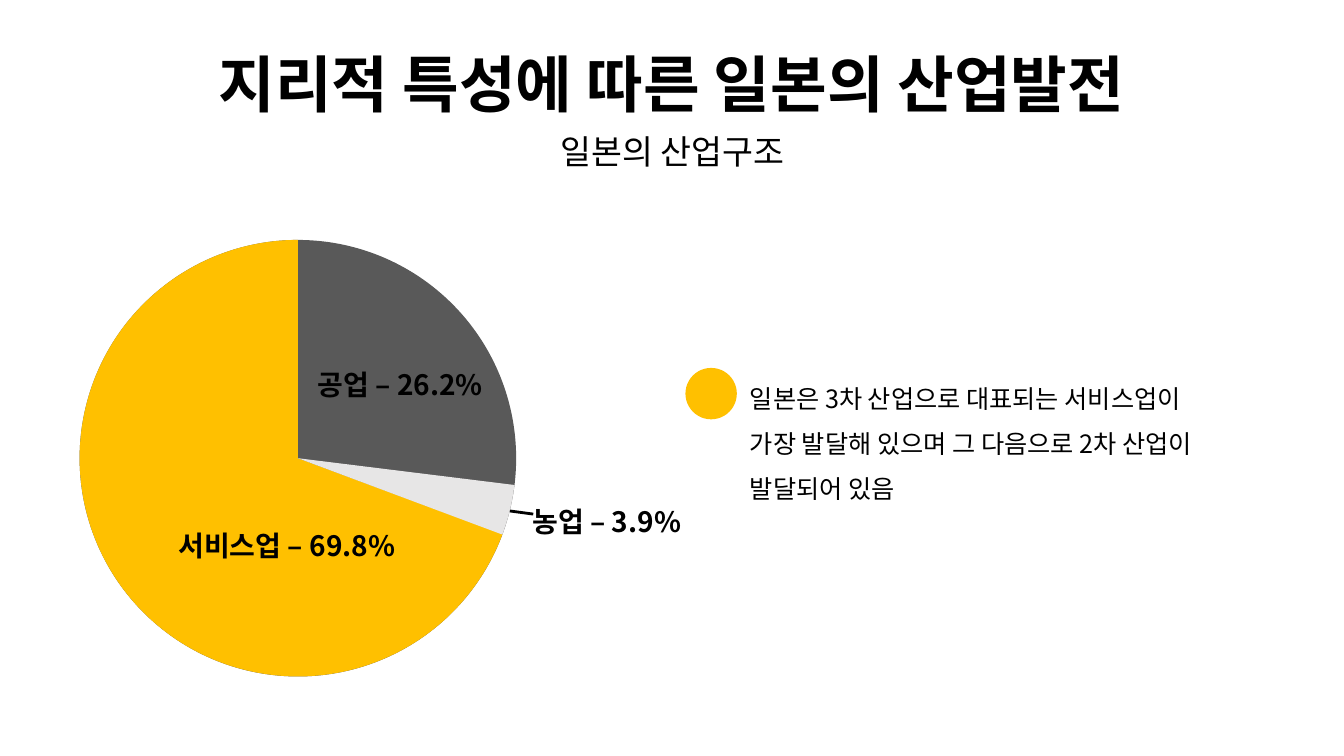
from dataclasses import dataclass

from lxml.etree import SubElement
from pptx import Presentation
from pptx.dml.color import RGBColor
from pptx.enum.shapes import MSO_CONNECTOR, MSO_SHAPE
from pptx.enum.text import MSO_ANCHOR, MSO_AUTO_SIZE, PP_ALIGN
from pptx.oxml.ns import qn
from pptx.util import Pt

COLORS = {"text": "000000", "industry": "595959", "service": "FFC000", "farming": "E7E6E6"}
FONT = "Noto Sans CJK KR"
PIE_LEFT, PIE_TOP, PIE_SIZE = 56.9, 171.4, 311.8


@dataclass(frozen=True)
class Sector:
    color: str
    start: float
    end: float


@dataclass(frozen=True)
class Label:
    text: str
    left: float
    top: float
    width: float


SECTORS = [Sector("service", 20.36, 270), Sector("farming", 7.06, 20.49)]
LABELS = [
    Label("서비스업 – 69.8%", 127.4, 365.8, 170),
    Label("공업 – 26.2%", 226.8, 250.6, 141.8),
    Label("농업 – 3.9%", 380.2, 348.5, 141.8),
]
SUMMARY = [
    "일본은 3차 산업으로 대표되는 서비스업이",
    "가장 발달해 있으며 그 다음으로 2차 산업이",
    "발달되어 있음",
]


def rgb(name: str) -> RGBColor:
    return RGBColor.from_string(COLORS[name])


def place(shape, left: float, top: float, width: float, height: float) -> None:
    shape.left, shape.top = Pt(left), Pt(top)
    shape.width, shape.height = Pt(width), Pt(height)


def write_text(shape, lines: list[str], *, size: float, bold: bool = False,
               align=PP_ALIGN.JUSTIFY, spacing: float = 1.5,
               inset: bool = False, wrap: bool = True) -> None:
    frame = shape.text_frame
    frame.word_wrap = wrap
    frame.auto_size = MSO_AUTO_SIZE.NONE if wrap else MSO_AUTO_SIZE.SHAPE_TO_FIT_TEXT
    frame.vertical_anchor = MSO_ANCHOR.TOP
    frame.margin_left = frame.margin_right = Pt(7.2 if inset else 0)
    frame.margin_top = frame.margin_bottom = Pt(3.6 if inset else 0)
    frame.text = "\n".join(lines)
    for paragraph in frame.paragraphs:
        paragraph.alignment = align
        paragraph.line_spacing = spacing
        paragraph.space_before = Pt(0)
        properties = paragraph._p.get_or_add_pPr()
        properties.set("marL", "0")
        properties.set("indent", "0")
        SubElement(properties, qn("a:buNone"))
        for run in paragraph.runs:
            run.font.size = Pt(size)
            run.font.bold = bold
            run.font.color.rgb = rgb("text")
            run.font.name = FONT
            SubElement(run._r.get_or_add_rPr(), qn("a:ea"), typeface=FONT)


def add_filled(shapes, kind: MSO_SHAPE, color: str, left: float, top: float, size: float):
    shape = shapes.add_shape(kind, Pt(left), Pt(top), Pt(size), Pt(size))
    shape.shadow.inherit = False
    shape.fill.solid()
    shape.fill.fore_color.rgb = rgb(color)
    shape.line.fill.background()
    return shape


def add_sector(shapes, sector: Sector) -> None:
    shape = add_filled(shapes, MSO_SHAPE.PIE, sector.color, PIE_LEFT, PIE_TOP, PIE_SIZE)
    shape.adjustments[0] = sector.start * 0.6
    shape.adjustments[1] = sector.end * 0.6


def add_label(shapes, label: Label) -> None:
    box = shapes.add_textbox(Pt(label.left), Pt(label.top), Pt(label.width), Pt(35.3))
    write_text(box, [label.text], size=20, bold=True)


def add_leader(shapes) -> None:
    leader = shapes.add_connector(MSO_CONNECTOR.STRAIGHT, Pt(364.3), Pt(365), Pt(380.9), Pt(367.2))
    leader.line.color.rgb = rgb("text")
    leader.line.width = Pt(2)
    SubElement(leader._element.spPr, qn("a:effectLst"))


def add_industry_pie(slide) -> None:
    shapes = slide.shapes.add_group_shape().shapes
    add_filled(shapes, MSO_SHAPE.OVAL, "industry", PIE_LEFT, PIE_TOP, PIE_SIZE)
    for sector in SECTORS:
        add_sector(shapes, sector)
    for label in LABELS:
        add_label(shapes, label)
    add_leader(shapes)


def main() -> None:
    presentation = Presentation()
    presentation.slide_width, presentation.slide_height = Pt(960), Pt(540)
    slide = presentation.slides.add_slide(presentation.slide_layouts[1])

    title = slide.shapes.title
    place(title, 108, 29.5, 743.8, 60.5)
    write_text(title, ["지리적 특성에 따른 일본의 산업발전"], size=44, bold=True,
               align=PP_ALIGN.CENTER, spacing=1.0, inset=True, wrap=False)

    subtitle = slide.shapes.add_textbox(Pt(383.8), Pt(90), Pt(193), Pt(36))
    write_text(subtitle, ["일본의 산업구조"], size=24,
               align=PP_ALIGN.CENTER, spacing=1.0, inset=True, wrap=False)

    add_industry_pie(slide)
    add_filled(slide.shapes, MSO_SHAPE.OVAL, "service", 489.6, 262.8, 36.7)

    summary = slide.placeholders[1]
    place(summary, 535.7, 262.8, 368.6, 110.9)
    write_text(summary, SUMMARY, size=18)

    presentation.save("out.pptx")


if __name__ == "__main__":
    main()
